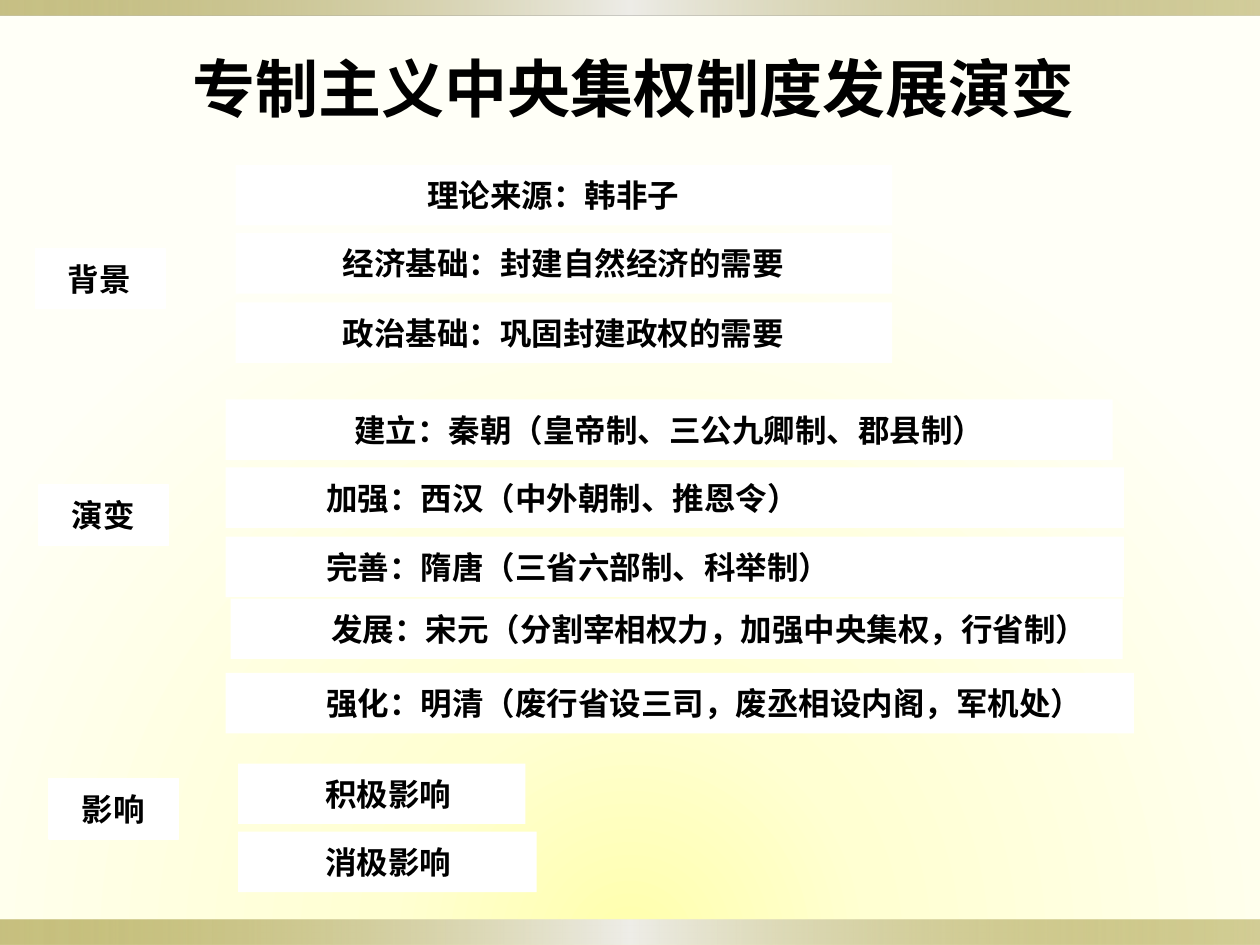
from lxml.etree import SubElement
from pptx import Presentation
from pptx.dml.color import RGBColor
from pptx.enum.shapes import MSO_SHAPE as SHAPE
from pptx.enum.text import MSO_ANCHOR as ANCHOR, PP_ALIGN as ALIGN
from pptx.oxml.ns import qn
from pptx.util import Inches, Pt


def rgb(value):
    return RGBColor.from_string(value)


def set_gradient(root, stops, focus=None):
    grad = next(root.iter(qn("a:gradFill")))
    grad.clear()
    grad.set("rotWithShape", "1")
    stop_list = SubElement(grad, qn("a:gsLst"))
    for position, color, alpha in stops:
        stop = SubElement(stop_list, qn("a:gs"), pos=str(position * 1000))
        clr = SubElement(stop, qn("a:srgbClr"), val=color)
        if alpha < 100:
            SubElement(clr, qn("a:alpha"), val=str(alpha * 1000))
    if focus:
        circle = SubElement(grad, qn("a:path"), path="circle")
        rect = SubElement(circle, qn("a:fillToRect"))
        for side, percent in zip("ltrb", focus):
            rect.set(side, str(percent * 1000))
    else:
        SubElement(grad, qn("a:lin"), ang="0", scaled="0")


class Deck:
    ink = "000000"
    paper = "FFFFFF"
    gold = [(0, "918415", 50), (50, "EEEDE8", 100), (100, "918415", 40)]
    glow = [(0, "FFFFAC", 100), (31, "FFFFD2", 100), (100, "FFFFF7", 100)]
    box_height = 0.48
    inset = 0.07

    def __init__(self, s):
        self.s = s

    def background(self):
        self.s.background.fill.gradient()
        set_gradient(self.s._element, self.glow, (50, 150, 50, 0))

    def rect(self, x, y, w, h):
        sp = self.s.shapes.add_shape(
            SHAPE.RECTANGLE, Inches(x), Inches(y), Inches(w), Inches(h))
        sp.shadow.inherit = False
        sp.line.fill.background()
        return sp

    def band(self, y, h):
        sp = self.rect(0, y, 10, h)
        sp.fill.gradient()
        set_gradient(sp._element, self.gold)

    def text(self, tf, words, size, font, align):
        tf.word_wrap = True
        tf.vertical_anchor = ANCHOR.MIDDLE
        p = tf.paragraphs[0]
        p.text = words
        p.alignment = align
        p.font.size = Pt(size)
        p.font.name = font
        p.font.bold = True
        p.font.color.rgb = rgb(self.ink)

    def title(self, words):
        sp = self.s.shapes.add_textbox(
            Inches(0.28), Inches(0.34), Inches(9.49), Inches(0.7))
        self.text(sp.text_frame, words, 36, "Karla", ALIGN.CENTER)

    def box(self, words, x, y, w, indent):
        sp = self.rect(x, y, w, self.box_height)
        sp.fill.solid()
        sp.fill.fore_color.rgb = rgb(self.paper)
        tf = sp.text_frame
        tf.margin_left = Inches(self.inset + indent)
        tf.margin_right = Inches(self.inset)
        tf.margin_top = tf.margin_bottom = Inches(0.04)
        self.text(tf, words, 18, "Times New Roman", ALIGN.LEFT)
        return sp

    def label(self, words, x, y):
        sp = self.box(words, x, y, 1.03, 0.19)
        sp.line.color.rgb = rgb(self.paper)
        sp.line.width = Pt(0.75)


LABELS = [("背景", 0.28, 1.97), ("演变", 0.31, 3.85), ("影响", 0.39, 6.18)]
BOXES = [
    ("理论来源：韩非子", 1.87, 1.31, 5.21, 1.45),
    ("经济基础：封建自然经济的需要", 1.87, 1.85, 5.21, 0.78),
    ("政治基础：巩固封建政权的需要", 1.87, 2.4, 5.21, 0.78),
    ("建立：秦朝（皇帝制、三公九卿制、郡县制）", 1.79, 3.17, 7.04, 0.95),
    ("加强：西汉（中外朝制、推恩令）", 1.79, 3.71, 7.13, 0.73),
    ("完善：隋唐（三省六部制、科举制）", 1.79, 4.26, 7.13, 0.73),
    ("发展：宋元（分割宰相权力，加强中央集权，行省制）", 1.83, 4.75, 7.08, 0.73),
    ("强化：明清（废行省设三司，废丞相设内阁，军机处）", 1.79, 5.34, 7.21, 0.73),
    ("积极影响", 1.89, 6.06, 2.28, 0.62),
    ("消极影响", 1.89, 6.6, 2.37, 0.62),
]


def main():
    prs = Presentation()
    prs.slide_width, prs.slide_height = Inches(10), Inches(7.5)
    deck = Deck(prs.slides.add_slide(prs.slide_layouts[6]))
    deck.background()
    deck.band(7.3, 0.2)
    deck.band(0, 0.12)
    deck.title("专制主义中央集权制度发展演变")
    for box in BOXES:
        deck.box(*box)
    for label in LABELS:
        deck.label(*label)
    prs.save("out.pptx")


if __name__ == "__main__":
    main()
